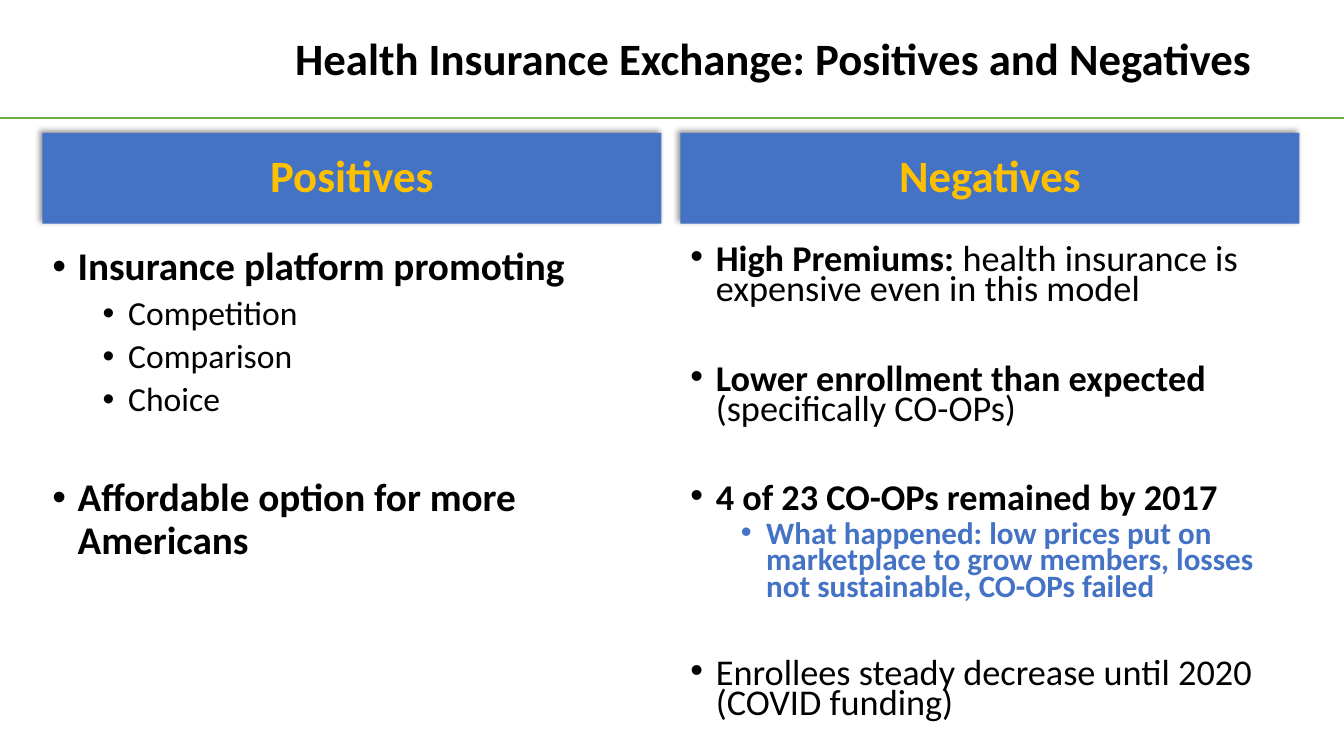
from pptx import Presentation
from pptx.dml.color import RGBColor
from pptx.enum.shapes import MSO_CONNECTOR, MSO_SHAPE
from pptx.enum.text import MSO_ANCHOR, PP_ALIGN
from pptx.oxml import parse_xml
from pptx.oxml.ns import nsdecls, qn
from pptx.util import Cm, Pt

BLACK, BLUE, GOLD, GREEN = "000000", "4472C4", "FFC000", "70AD47"
SLIDE_W, SLIDE_H = 33.87, 19.05
HEADER_TOP, HEADER_W, HEADER_H = 3.35, 15.6, 2.29
BODY_TOP = 6.1
SECTION_GAP = 42

# Each point: level, space before in points, runs of (text, bold, colour)
POSITIVES = [
    (0, 0, [("Insurance platform promoting", True, BLACK)]),
    (1, 5, [("Competition", False, BLACK)]),
    (1, 5, [("Comparison", False, BLACK)]),
    (1, 5, [("Choice", False, BLACK)]),
    (0, SECTION_GAP, [("Affordable option for more Americans", True, BLACK)]),
]
NEGATIVES = [
    (0, 0, [("High Premiums: ", True, BLACK),
            ("health insurance is expensive even in this model", False, BLACK)]),
    (0, SECTION_GAP, [("Lower enrollment than expected ", True, BLACK),
                      ("(specifically CO-OPs)", False, BLACK)]),
    (0, SECTION_GAP, [("4 of 23 CO-OPs remained by 2017", True, BLACK)]),
    (1, 5, [("What happened: low prices put on marketplace to grow members, "
             "losses not sustainable, CO-OPs failed", True, BLUE)]),
    (0, SECTION_GAP, [("Enrollees steady decrease until 2020 (COVID funding)",
                       False, BLACK)]),
]
# Each column: heading, left, body width, body height, line spacing, sizes by level, points
COLUMNS = [
    ("Positives", 1.07, 15.6, 11.1, 0.9, (28, 24), POSITIVES),
    ("Negatives", 17.15, 15.67, 12.42, 0.7, (25.9, 22.2), NEGATIVES),
]


def rgb(value):
    return RGBColor.from_string(value)


def set_attrs(obj, **values):
    for name, value in values.items():
        setattr(obj, name, value)


def add_run(p, text, size, bold, color):
    r = p.add_run()
    r.text = text
    set_attrs(r.font, name="Calibri", size=Pt(size), bold=bold)
    r.font.color.rgb = rgb(color)


def add_box(slide, *box):
    tf = slide.shapes.add_textbox(*map(Cm, box)).text_frame
    tf.word_wrap = True
    return tf


def add_title(slide, text):
    tf = add_box(slide, 7.19, 0.51, 25.55, 2.03)
    tf.vertical_anchor = MSO_ANCHOR.MIDDLE
    p = tf.paragraphs[0]
    p.line_spacing = 0.9
    add_run(p, text, 32, True, BLACK)


def add_rule(slide, y):
    line = slide.shapes.add_connector(
        MSO_CONNECTOR.STRAIGHT, Cm(0), Cm(y), Cm(SLIDE_W), Cm(y))
    line.line.color.rgb = rgb(GREEN)
    line.line.width = Pt(1.25)
    line._element.spPr.append(parse_xml(f"<a:effectLst {nsdecls('a')}/>"))


def add_shadow(sp):
    """Cast a soft shadow towards the upper left."""
    sp.shadow.inherit = False
    effects = sp._element.spPr.find(qn("a:effectLst"))
    effects.append(parse_xml(
        f'<a:outerShdw {nsdecls("a")} blurRad="{Pt(4)}" dist="{Pt(3)}" '
        f'dir="{225 * 60000}" algn="br" rotWithShape="0">'
        f'<a:srgbClr val="{BLACK}"><a:alpha val="40000"/></a:srgbClr></a:outerShdw>'))


def add_header(slide, text, left):
    sp = slide.shapes.add_shape(
        MSO_SHAPE.RECTANGLE, *map(Cm, (left, HEADER_TOP, HEADER_W, HEADER_H)))
    sp.fill.solid()
    sp.fill.fore_color.rgb = rgb(BLUE)
    sp.line.fill.background()
    add_shadow(sp)
    set_attrs(sp.text_frame, word_wrap=True, vertical_anchor=MSO_ANCHOR.MIDDLE)
    p = sp.text_frame.paragraphs[0]
    set_attrs(p, alignment=PP_ALIGN.CENTER, line_spacing=0.9)
    add_run(p, text, 32, True, GOLD)


def add_bullet(p, level):
    pPr = p._p.get_or_add_pPr()
    pPr.set("marL", str(Cm(0.64 + 1.27 * level)))
    pPr.set("indent", str(Cm(-0.64)))
    pPr.append(parse_xml(f'<a:buFont {nsdecls("a")} typeface="Arial"/>'))
    pPr.append(parse_xml(f'<a:buChar {nsdecls("a")} char="•"/>'))


def add_points(slide, box, spacing, sizes, points):
    tf = add_box(slide, *box)
    for i, (level, before, runs) in enumerate(points):
        p = tf.add_paragraph() if i else tf.paragraphs[0]
        add_bullet(p, level)
        set_attrs(p, level=level, line_spacing=spacing, space_before=Pt(before))
        for text, bold, color in runs:
            add_run(p, text, sizes[level], bold, color)


def main():
    prs = Presentation()
    set_attrs(prs, slide_width=Cm(SLIDE_W), slide_height=Cm(SLIDE_H))
    slide = prs.slides.add_slide(prs.slide_layouts[6])
    add_rule(slide, 2.97)
    for heading, left, width, height, spacing, sizes, points in COLUMNS:
        add_header(slide, heading, left)
        add_points(slide, (left, BODY_TOP, width, height), spacing, sizes, points)
    add_title(slide, "Health Insurance Exchange: Positives and Negatives")
    prs.save("out.pptx")


if __name__ == "__main__":
    main()
